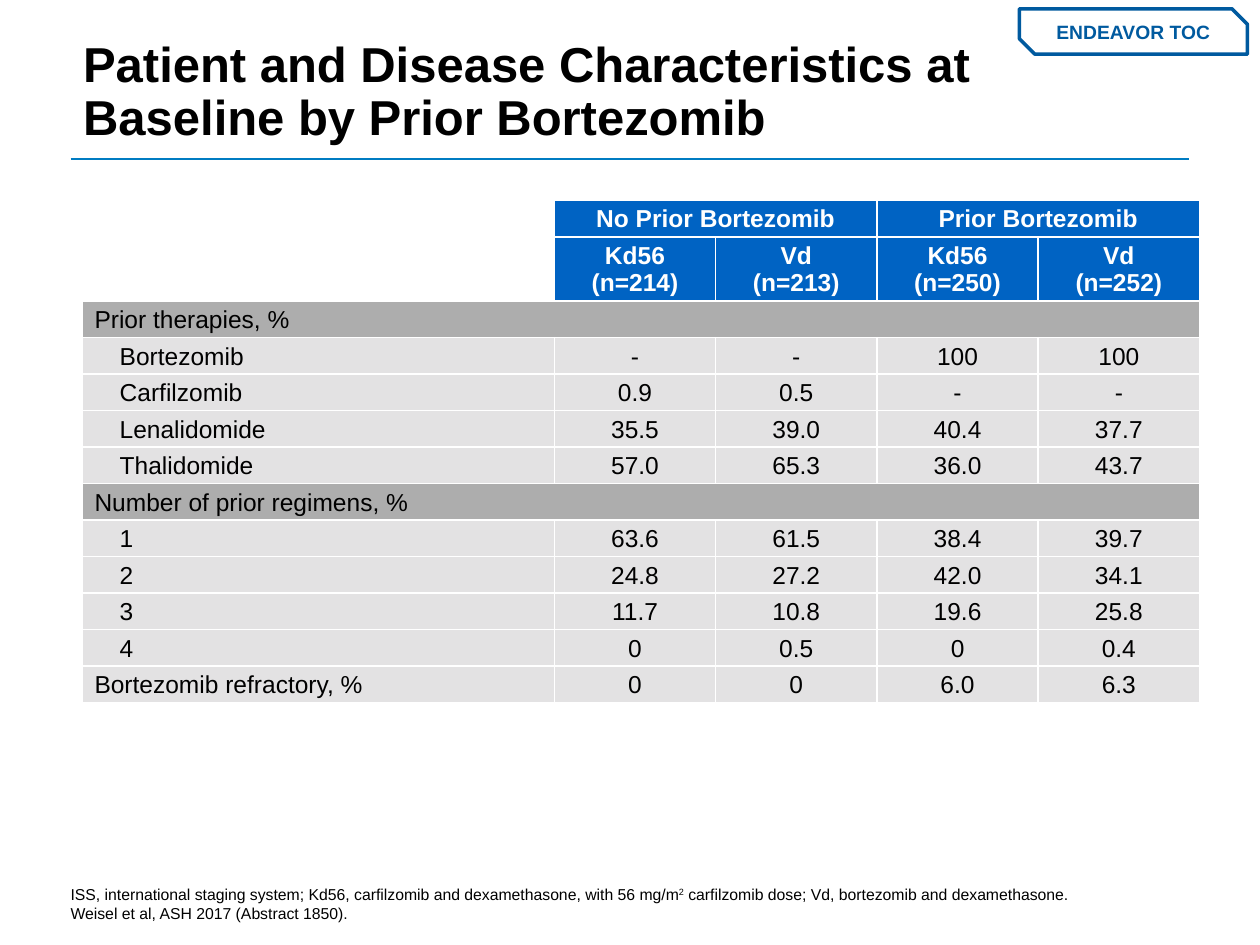
from dataclasses import dataclass

from lxml import etree
from pptx import Presentation
from pptx import util as u
from pptx.dml import color
from pptx.enum import shapes, text
from pptx.oxml import ns

Inches = u.Inches
BLACK, WHITE = "000000", "FFFFFF"
HEADER, SECTION, BODY = "0063C3", "ADADAD", "E3E2E3"
RULE, BADGE = "007CC2", "005A9F"
COLUMNS = [3.75] + [1.28] * 4


@dataclass
class Row:
    label: str
    values: tuple = ()
    indent: float = 0.2


GROUPS = ("No Prior Bortezomib", "Prior Bortezomib")
ARMS = (("Kd56", "(n=214)"), ("Vd", "(n=213)"),
        ("Kd56", "(n=250)"), ("Vd", "(n=252)"))
ROWS = [
    Row("Prior therapies, %", indent=0),
    Row("Bortezomib", ("-", "-", "100", "100")),
    Row("Carfilzomib", ("0.9", "0.5", "-", "-")),
    Row("Lenalidomide", ("35.5", "39.0", "40.4", "37.7")),
    Row("Thalidomide", ("57.0", "65.3", "36.0", "43.7")),
    Row("Number of prior regimens, %", indent=0),
    Row("1", ("63.6", "61.5", "38.4", "39.7")),
    Row("2", ("24.8", "27.2", "42.0", "34.1")),
    Row("3", ("11.7", "10.8", "19.6", "25.8")),
    Row("4", ("0", "0.5", "0", "0.4")),
    Row("Bortezomib refractory, %", ("0", "0", "6.0", "6.3"), indent=0),
]


def rgb(value: str) -> color.RGBColor:
    return color.RGBColor.from_string(value)


def add_run(p, words: str, size: float, fill: str = BLACK, bold: bool = False):
    r = p.add_run()
    r.text = words
    r.font.name = "Arial"
    r.font.size = u.Pt(size)
    r.font.bold = bold
    r.font.color.rgb = rgb(fill)
    return r


def place(sp, left: float, top: float, width: float, height: float) -> None:
    sp.left, sp.top = Inches(left), Inches(top)
    sp.width, sp.height = Inches(width), Inches(height)


def bottom_frame(sp):
    tf = sp.text_frame
    tf.word_wrap = True
    tf.auto_size = text.MSO_AUTO_SIZE.NONE
    tf.vertical_anchor = text.MSO_ANCHOR.BOTTOM
    return tf


def draw_title(s) -> None:
    sp = s.shapes.title
    place(sp, 0.56, 0, 8.88, 1.21)
    p = bottom_frame(sp).paragraphs[0]
    p.alignment = text.PP_ALIGN.LEFT
    p.line_spacing = 0.9
    add_run(p, "Patient and Disease Characteristics at Baseline by Prior Bortezomib",
            28, bold=True)


def draw_footnote(s) -> None:
    sp = s.placeholders[1]
    place(sp, 0.46, 6.5, 8.14, 0.87)
    p = bottom_frame(sp).paragraphs[0]
    pPr = p._p.get_or_add_pPr()
    pPr.set("marL", "0")
    pPr.set("indent", "0")
    etree.SubElement(pPr, ns.qn("a:buNone"))
    p.space_before = u.Pt(0)
    add_run(p, "ISS, international staging system; Kd56, carfilzomib and "
               "dexamethasone, with 56 mg/m", 9)
    r = add_run(p, "2", 9)
    r._r.get_or_add_rPr().set("baseline", "30000")
    add_run(p, " carfilzomib dose; Vd, bortezomib and dexamethasone.", 9)
    p.add_line_break()
    add_run(p, "Weisel et al, ASH 2017 (Abstract 1850).", 9)


def draw_rule(s) -> None:
    line = s.shapes.add_connector(shapes.MSO_CONNECTOR.STRAIGHT, Inches(0.56),
                                  Inches(1.26), Inches(9.44), Inches(1.26))
    line.line.color.rgb = rgb(RULE)
    line.line.width = u.Pt(1)
    etree.SubElement(line._element.spPr, ns.qn("a:effectLst"))


def draw_badge(s) -> None:
    sp = s.shapes.add_shape(shapes.MSO_SHAPE.SNIP_2_DIAG_RECTANGLE, Inches(8.09),
                            Inches(0.07), Inches(1.81), Inches(0.36))
    sp.adjustments[0], sp.adjustments[1] = 0, 0.34
    sp.shadow.inherit = False
    sp.fill.background()
    sp.line.color.rgb = rgb(BADGE)
    sp.line.width = u.Pt(2)
    tf = sp.text_frame
    tf.word_wrap = False
    tf.vertical_anchor = text.MSO_ANCHOR.MIDDLE
    p = tf.paragraphs[0]
    p.alignment = text.PP_ALIGN.CENTER
    add_run(p, "ENDEAVOR TOC", 11, BADGE, True)


def style_cell(cell, fill: str) -> None:
    cell.margin_left = cell.margin_right = Inches(0.1)
    cell.margin_top, cell.margin_bottom = Inches(0.04), Inches(0.03)
    cell.vertical_anchor = text.MSO_ANCHOR.MIDDLE
    tcPr = cell._tc.get_or_add_tcPr()
    for side in ("lnL", "lnR", "lnT", "lnB"):
        ln = etree.SubElement(tcPr, ns.qn(f"a:{side}"), w=str(u.Pt(1)))
        solid = etree.SubElement(ln, ns.qn("a:solidFill"))
        etree.SubElement(solid, ns.qn("a:srgbClr"), val=WHITE)
    cell.fill.solid()
    cell.fill.fore_color.rgb = rgb(fill)


def write_cell(cell, lines: tuple, fill: str, ink: str = BLACK,
               bold: bool = False, indent=None) -> None:
    style_cell(cell, fill)
    tf = cell.text_frame
    for i, words in enumerate(lines):
        p = tf.add_paragraph() if i else tf.paragraphs[0]
        if indent is None:
            p.alignment = text.PP_ALIGN.CENTER
        elif indent:
            p._p.get_or_add_pPr().set("marL", str(Inches(indent)))
        add_run(p, words, 14, ink, bold)
    if not lines:
        etree.SubElement(tf.paragraphs[0]._p, ns.qn("a:endParaRPr"), sz="1400")


def draw_table(s) -> None:
    heights = [0.29, 0.51] + [0.29] * len(ROWS)
    tbl = s.shapes.add_table(len(heights), len(COLUMNS), Inches(0.65), Inches(1.59),
                             Inches(sum(COLUMNS)), Inches(sum(heights))).table
    tbl.first_row = tbl.horz_banding = False
    for column, width in zip(tbl.columns, COLUMNS):
        column.width = Inches(width)
    for row, height in zip(tbl.rows, heights):
        row.height = Inches(height)

    for i in range(2):
        write_cell(tbl.cell(i, 0), (), WHITE)
    tbl.cell(0, 0).merge(tbl.cell(1, 0))
    for j, arm in enumerate(ARMS, 1):
        heading = (GROUPS[j // 2],) if j % 2 else ()
        write_cell(tbl.cell(0, j), heading, HEADER, WHITE, True)
        write_cell(tbl.cell(1, j), arm, HEADER, WHITE, True)
    for j in (1, 3):
        tbl.cell(0, j).merge(tbl.cell(0, j + 1))

    for i, row in enumerate(ROWS, 2):
        fill = BODY if row.values else SECTION
        write_cell(tbl.cell(i, 0), (row.label,), fill, indent=row.indent)
        for j in range(1, len(COLUMNS)):
            lines = (row.values[j - 1],) if row.values else ()
            write_cell(tbl.cell(i, j), lines, fill)
        if not row.values:
            tbl.cell(i, 0).merge(tbl.cell(i, len(COLUMNS) - 1))


def main() -> None:
    prs = Presentation()
    prs.slide_width, prs.slide_height = Inches(10), Inches(7.5)
    s = prs.slides.add_slide(prs.slide_layouts[1])
    draw_rule(s)
    draw_title(s)
    draw_footnote(s)
    draw_badge(s)
    draw_table(s)
    prs.save("out.pptx")


if __name__ == "__main__":
    main()
